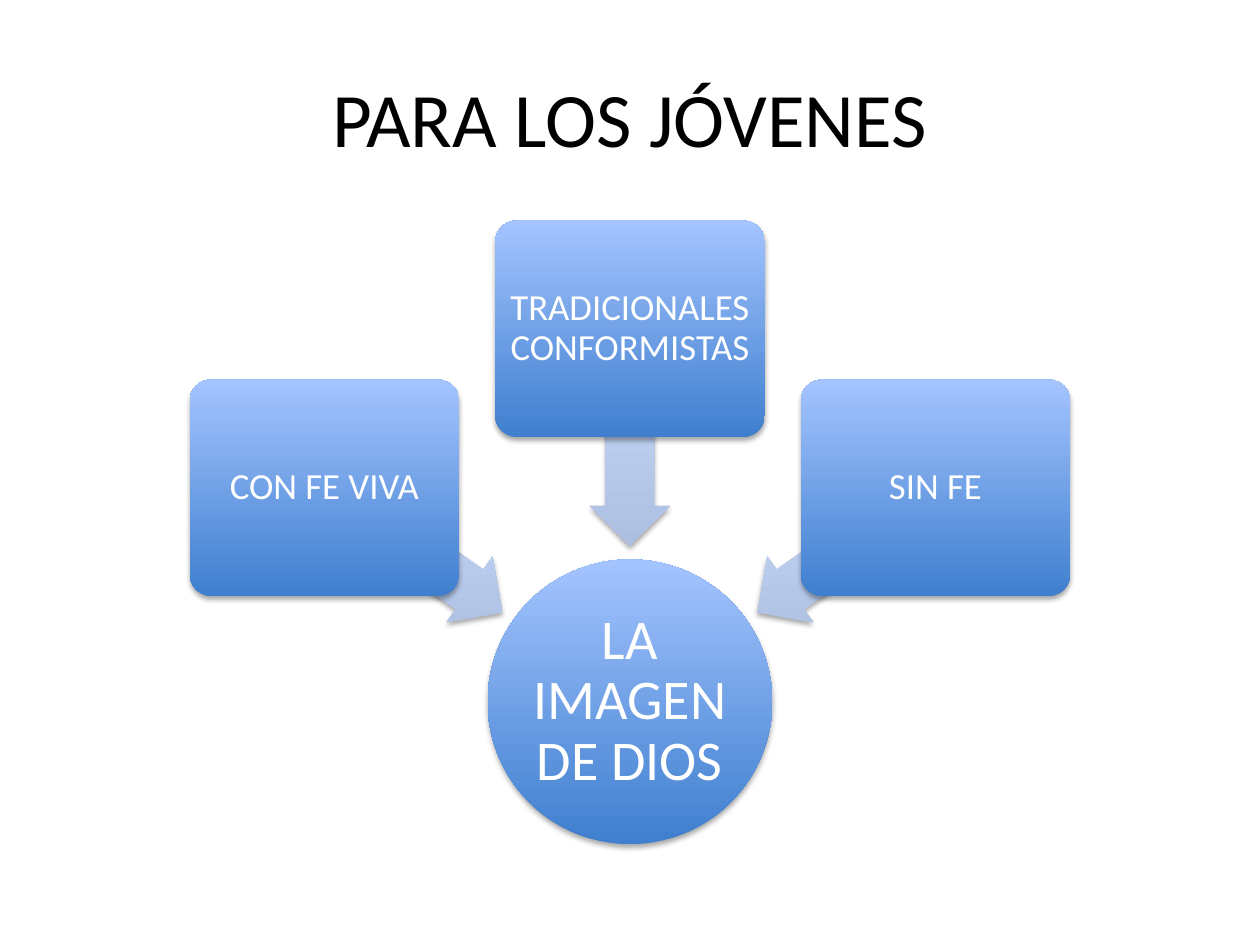
"""Build a slide of three groups of young people around one central idea."""
from math import cos, radians, sin

from lxml.etree import SubElement
from pptx import Presentation
from pptx.dml.color import RGBColor
from pptx.enum.shapes import MSO_SHAPE as Shape
from pptx.enum.text import MSO_ANCHOR as Anchor, PP_ALIGN as Align
from pptx.oxml.ns import qn
from pptx.util import Inches, Pt

TITLE = "PARA LOS JÓVENES"
CENTRE_IDEA = "LA IMAGEN DE DIOS"
GROUPS = [("CON FE VIVA", 215), ("TRADICIONALES CONFORMISTAS", 270), ("SIN FE", 325)]

THEME = {
    "font": "Calibri",
    "title_color": "000000", "label_color": "FFFFFF", "shadow_color": "000000",
    "title_size": 44, "idea_size": 32, "group_size": 21,
    "node": ("3F7FCE", "A4C4FF"), "arrow": ("ADBFE1", "CCDDFF"),
}

CENTRE = (5, 5.57)
CIRCLE_SIZE = (2.26, 2.26)
BOX_SIZE = (2.14, 1.72)
ARROW_SIZE = (1.73, 0.64)
BOX_DISTANCE = 2.96
ARROW_DISTANCE = 2.1


def around_centre(angle, distance):
    turn = radians(angle)
    return CENTRE[0] + distance * cos(turn), CENTRE[1] + distance * sin(turn)


def add_shadow(shape):
    effects = SubElement(shape._element.spPr, qn("a:effectLst"))
    shadow = SubElement(effects, qn("a:outerShdw"), blurRad=str(Pt(3.1)),
                        dist=str(Pt(1.8)), dir="5400000", rotWithShape="0")
    color = SubElement(shadow, qn("a:srgbClr"), val=THEME["shadow_color"])
    SubElement(color, qn("a:alpha"), val="35000")


def add_gradient_shape(slide, kind, centre, size, colors):
    left, top = (middle - length / 2 for middle, length in zip(centre, size))
    shape = slide.shapes.add_shape(kind, Inches(left), Inches(top), *map(Inches, size))
    shape.fill.gradient()
    shape.fill.gradient_angle = 90
    for stop, color in zip(shape.fill.gradient_stops, colors):
        stop.color.rgb = RGBColor.from_string(color)
    shape._element.spPr.find(qn("a:gradFill")).set("rotWithShape", "0")
    shape.line.fill.background()
    add_shadow(shape)
    return shape


def write_text(shape, text, size, color):
    frame = shape.text_frame
    frame.text = text
    frame.word_wrap = True
    frame.vertical_anchor = Anchor.MIDDLE
    para = frame.paragraphs[0]
    para.alignment = Align.CENTER
    font = para.runs[0].font
    font.name, font.size = THEME["font"], Pt(size)
    font.color.rgb = RGBColor.from_string(color)


def write_label(shape, text, size, inset):
    write_text(shape, text, size, THEME["label_color"])
    frame = shape.text_frame
    frame.margin_left = frame.margin_right = Inches(inset)
    frame.margin_top = frame.margin_bottom = Inches(inset)
    frame.paragraphs[0].line_spacing = 0.9


def add_title(slide):
    title = slide.shapes.title
    title.left, title.top = Inches(0.5), Inches(0.3)
    title.width, title.height = Inches(9), Inches(1.25)
    write_text(title, TITLE, THEME["title_size"], THEME["title_color"])


def add_group(slide, text, angle):
    arrow = add_gradient_shape(slide, Shape.LEFT_ARROW, around_centre(angle, ARROW_DISTANCE),
                               ARROW_SIZE, THEME["arrow"])
    arrow.adjustments[0], arrow.adjustments[1] = 0.6, 0.5
    arrow.rotation = angle
    box = add_gradient_shape(slide, Shape.ROUNDED_RECTANGLE, around_centre(angle, BOX_DISTANCE),
                             BOX_SIZE, THEME["node"])
    box.adjustments[0] = 0.1
    write_label(box, text, THEME["group_size"], 0.04)


def main():
    deck = Presentation()
    deck.slide_width, deck.slide_height = Inches(10), Inches(7.5)
    slide = deck.slides.add_slide(deck.slide_layouts[5])
    add_title(slide)
    circle = add_gradient_shape(slide, Shape.OVAL, CENTRE, CIRCLE_SIZE, THEME["node"])
    write_label(circle, CENTRE_IDEA, THEME["idea_size"], 0.02)
    for text, angle in GROUPS:
        add_group(slide, text, angle)
    deck.save("out.pptx")


if __name__ == "__main__":
    main()
